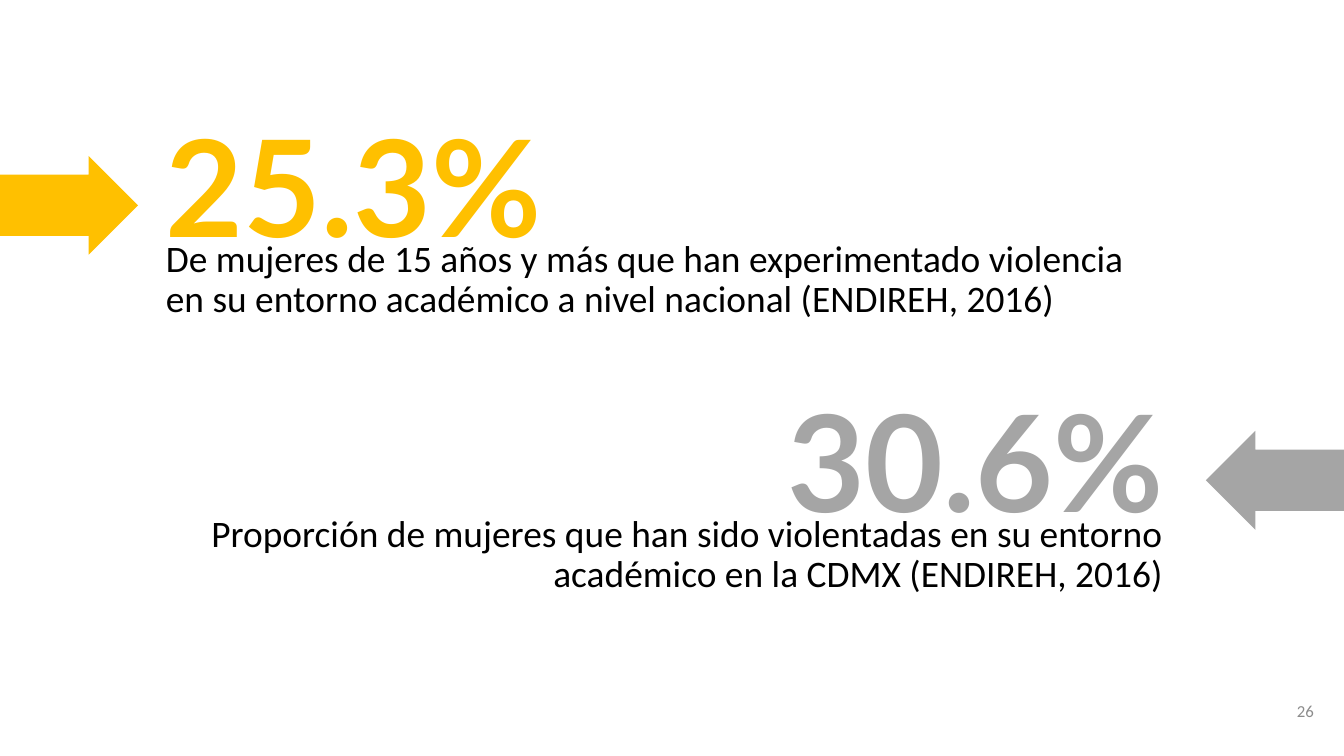
from dataclasses import dataclass

from pptx import Presentation
from pptx.dml.color import RGBColor
from pptx.enum.shapes import MSO_SHAPE as Shape
from pptx.enum.text import MSO_ANCHOR as Anchor, PP_ALIGN as Align
from pptx.util import Cm, Pt


@dataclass(frozen=True)
class Theme:
    yellow: str = "FFC000"
    gray: str = "A5A5A5"
    black: str = "000000"
    page_gray: str = "8C8C8C"
    figure_font: str = "Lato"
    body_font: str = "Calibri"
    figure_size: float = 96
    body_size: float = 26.7
    page_size: float = 12


THEME = Theme()

STATISTICS = [
    {
        "figure": "25.3%",
        "caption": "De mujeres de 15 años y más que han experimentado violencia "
                   "en su entorno académico a nivel nacional (ENDIREH, 2016)",
        "color": THEME.yellow,
        "side": "left",
    },
    {
        "figure": "30.6%",
        "caption": "Proporción de mujeres que han sido violentadas en su entorno "
                   "académico en la CDMX (ENDIREH, 2016)",
        "color": THEME.gray,
        "side": "right",
    },
]
PAGE_NUMBER = "26"

# Lengths in centimetres
SLIDE_WIDTH, SLIDE_HEIGHT = 33.87, 19.05
FIRST_TOP, STATISTIC_STEP = 3.73, 6.93
TEXT_RIGHT = 29.66
TEXT_LEFT = {"left": 3.84, "right": 1.8}
FIGURE_HEIGHT, CAPTION_HEIGHT = 3.33, 1.73
CAPTION_OFFSET, ARROW_OFFSET = 1.98, 0.2
ARROW_WIDTH, ARROW_HEIGHT = 3.48, 2.49
ARROW_ADJUSTMENTS = (0.62, 0.5)
INSET = 0.34


def add_text(slide, text, left, top, width, height, *, size, color,
             font=THEME.body_font, bold=False, align=Align.LEFT,
             anchor=Anchor.TOP, line_spacing=0.9):
    box = slide.shapes.add_textbox(Cm(left), Cm(top), Cm(width), Cm(height))
    frame = box.text_frame
    frame.word_wrap = True
    frame.vertical_anchor = anchor
    frame.margin_left = frame.margin_right = Cm(INSET)
    frame.margin_top = frame.margin_bottom = Cm(INSET)
    paragraph = frame.paragraphs[0]
    paragraph.alignment = align
    paragraph.line_spacing = line_spacing
    run = paragraph.add_run()
    run.text = text
    run.font.name = font
    run.font.size = Pt(size)
    run.font.bold = bold
    run.font.color.rgb = RGBColor.from_string(color)


def add_arrow(slide, side, top, color):
    """Draw an arrow that points inwards from one edge of the slide."""
    kind, left = {
        "left": (Shape.RIGHT_ARROW, 0),
        "right": (Shape.LEFT_ARROW, SLIDE_WIDTH - ARROW_WIDTH),
    }[side]
    arrow = slide.shapes.add_shape(
        kind, Cm(left), Cm(top), Cm(ARROW_WIDTH), Cm(ARROW_HEIGHT))
    for index, value in enumerate(ARROW_ADJUSTMENTS):
        arrow.adjustments[index] = value
    arrow.shadow.inherit = False
    arrow.fill.solid()
    arrow.fill.fore_color.rgb = RGBColor.from_string(color)
    arrow.line.fill.background()


def add_statistic(slide, statistic, top):
    side, color = statistic["side"], statistic["color"]
    left = TEXT_LEFT[side]
    width = TEXT_RIGHT - left
    align = Align.LEFT if side == "left" else Align.RIGHT
    add_text(slide, statistic["figure"], left, top, width, FIGURE_HEIGHT,
             size=THEME.figure_size, color=color, font=THEME.figure_font,
             bold=True, align=align, anchor=Anchor.BOTTOM)
    add_text(slide, statistic["caption"], left, top + CAPTION_OFFSET, width,
             CAPTION_HEIGHT, size=THEME.body_size, color=THEME.black, align=align)
    add_arrow(slide, side, top + ARROW_OFFSET, color)


def main():
    presentation = Presentation()
    presentation.slide_width = Cm(SLIDE_WIDTH)
    presentation.slide_height = Cm(SLIDE_HEIGHT)
    slide = presentation.slides.add_slide(presentation.slide_layouts[6])
    for index, statistic in enumerate(STATISTICS):
        add_statistic(slide, statistic, FIRST_TOP + index * STATISTIC_STEP)
    add_text(slide, PAGE_NUMBER, 31.42, 17.4, 2.03, 1.17, size=THEME.page_size,
             color=THEME.page_gray, align=Align.RIGHT, line_spacing=1.0)
    presentation.save("out.pptx")


if __name__ == "__main__":
    main()
